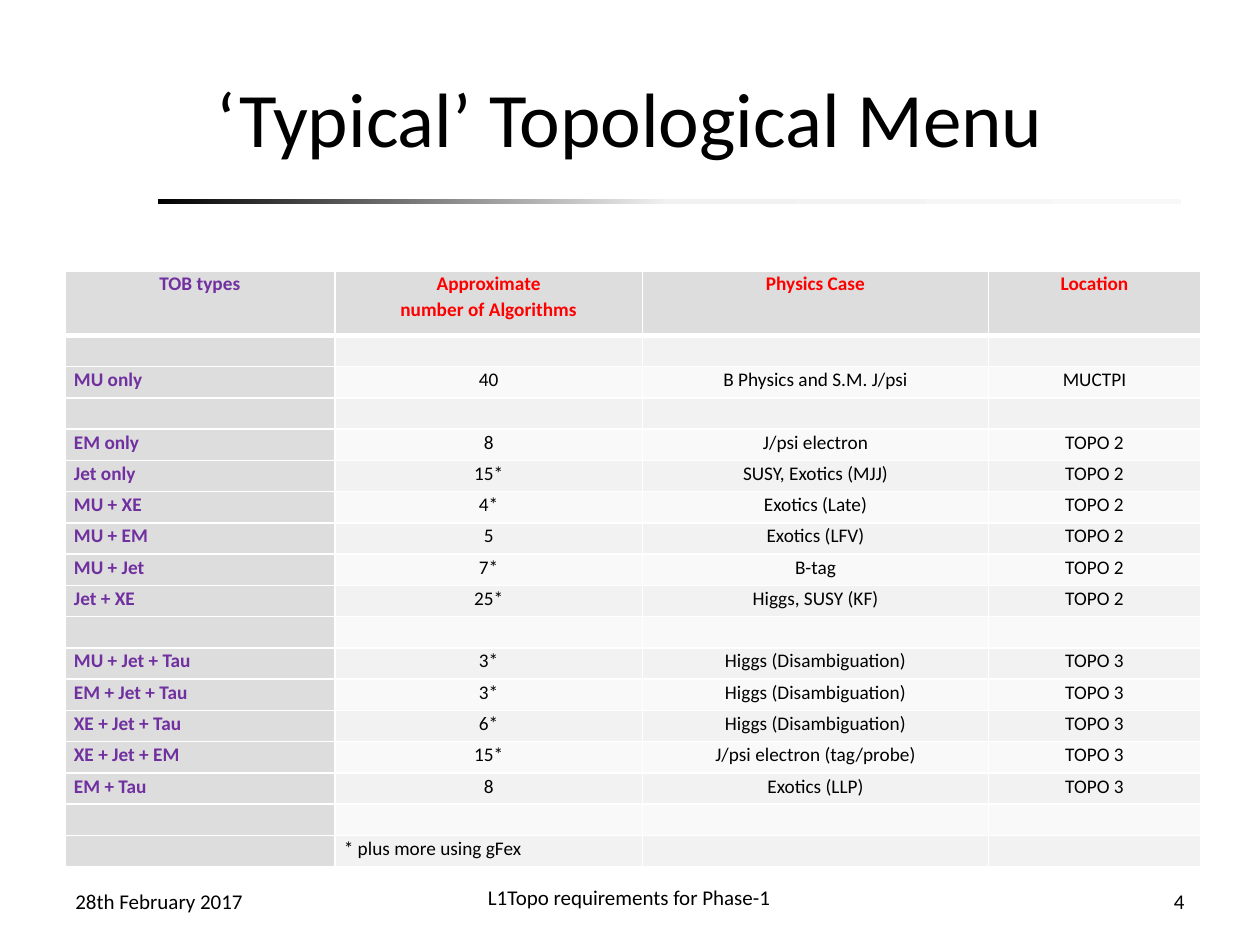
import lxml.etree
import pptx
import pptx.dml.color
import pptx.enum.shapes
import pptx.enum.text
import pptx.oxml
import pptx.oxml.ns
import pptx.util

Cm = pptx.util.Cm
Pt = pptx.util.Pt
RGBColor = pptx.dml.color.RGBColor
ALIGN = pptx.enum.text.PP_ALIGN
MIDDLE = pptx.enum.text.MSO_ANCHOR.MIDDLE
qn = pptx.oxml.ns.qn

BLACK = RGBColor(0x00, 0x00, 0x00)
WHITE = RGBColor(0xFF, 0xFF, 0xFF)
RED = RGBColor(0xFF, 0x00, 0x00)
PURPLE = RGBColor(0x70, 0x30, 0xA0)
HEADING_GREY = RGBColor(0xDD, 0xDD, 0xDD)
DARK_BAND = RGBColor(0xF2, 0xF2, 0xF2)
LIGHT_BAND = RGBColor(0xF9, 0xF9, 0xF9)
RULE_STOPS = [
    (0, BLACK),
    (50, RGBColor(0xF1, 0xF1, 0xF1)),
    (100, RGBColor(0xF8, 0xF8, 0xF8)),
]

FONT = "Calibri"
TABLE_SIZE = Pt(11)
COLUMN_WIDTHS = [5.44, 6.2, 6.98, 4.27]
HEADER_HEIGHT, ROW_HEIGHT = 1.3, 0.63
BLANK_ROW = ("", "", "", "")
MENU = [
    ("TOB types", "Approximate\nnumber of Algorithms", "Physics Case", "Location"),
    BLANK_ROW,
    ("MU only", "40", "B Physics and S.M. J/psi", "MUCTPI"),
    BLANK_ROW,
    ("EM only", "8", "J/psi electron", "TOPO 2"),
    ("Jet only", "15*", "SUSY, Exotics (MJJ)", "TOPO 2"),
    ("MU + XE", "4*", "Exotics (Late)", "TOPO 2"),
    ("MU + EM", "5", "Exotics (LFV)", "TOPO 2"),
    ("MU + Jet", "7*", "B-tag", "TOPO 2"),
    ("Jet + XE", "25*", "Higgs, SUSY (KF)", "TOPO 2"),
    BLANK_ROW,
    ("MU + Jet + Tau", "3*", "Higgs (Disambiguation)", "TOPO 3"),
    ("EM + Jet + Tau", "3*", "Higgs (Disambiguation)", "TOPO 3"),
    ("XE + Jet + Tau", "6*", "Higgs (Disambiguation)", "TOPO 3"),
    ("XE + Jet + EM", "15*", "J/psi electron (tag/probe)", "TOPO 3"),
    ("EM + Tau", "8", "Exotics (LLP)", "TOPO 3"),
    BLANK_ROW,
    ("", "* plus more using gFex", "", ""),
]


def format_paragraph(paragraph, size, color=BLACK, alignment=ALIGN.LEFT, bold=False):
    paragraph.alignment = alignment
    font = paragraph.font
    font.name, font.size, font.bold = FONT, size, bold
    font.color.rgb = color


def place(shape, left, top, width, height):
    shape.left, shape.top = Cm(left), Cm(top)
    shape.width, shape.height = Cm(width), Cm(height)


def add_title(slide, text):
    title = slide.shapes.title
    place(title, 1.27, 0.76, 22.86, 3.18)
    title.text_frame.text = text
    title.text_frame.vertical_anchor = MIDDLE
    format_paragraph(title.text_frame.paragraphs[0], Pt(44), alignment=ALIGN.CENTER)


def add_gradient_rule(slide):
    rule = slide.shapes.add_shape(
        pptx.enum.shapes.MSO_SHAPE.RECTANGLE, Cm(3.18), Cm(4.01), Cm(20.62), Cm(0.1))
    rule.shadow.inherit = False
    rule.line.fill.background()
    rule.fill.gradient()
    rule.fill.gradient_angle = 0
    stop_list = rule.element.spPr.find(".//" + qn("a:gsLst"))
    for stop in list(stop_list):
        stop_list.remove(stop)
    for percent, color in RULE_STOPS:
        stop = lxml.etree.SubElement(stop_list, qn("a:gs"), pos=str(percent * 1000))
        lxml.etree.SubElement(stop, qn("a:srgbClr"), val=str(color))


def add_footer(slide, text, left, top, width, alignment):
    box = slide.shapes.add_textbox(Cm(left), Cm(top), Cm(width), Cm(1.02))
    frame = box.text_frame
    frame.word_wrap = True
    frame.vertical_anchor = MIDDLE
    frame.text = text
    format_paragraph(frame.paragraphs[0], Pt(12), alignment=alignment)


def set_borders(cell, bottom_width):
    properties = cell._tc.get_or_add_tcPr()
    widths = [("a:lnL", 1), ("a:lnR", 1), ("a:lnT", 1), ("a:lnB", bottom_width)]
    for index, (tag, width) in enumerate(widths):
        line = properties.makeelement(qn(tag), {"w": str(Pt(width))})
        fill = lxml.etree.SubElement(line, qn("a:solidFill"))
        lxml.etree.SubElement(fill, qn("a:srgbClr"), val=str(WHITE))
        properties.insert(index, line)


def cell_style(row, column, text):
    """Return fill, text colour, alignment and weight for a table position."""
    if row == 0:
        return HEADING_GREY, PURPLE if column == 0 else RED, ALIGN.CENTER, True
    if column == 0:
        return HEADING_GREY, PURPLE, ALIGN.LEFT, True
    band = DARK_BAND if row % 2 else LIGHT_BAND
    is_footnote = text.startswith("*")
    return band, BLACK, ALIGN.LEFT if is_footnote else ALIGN.CENTER, False


def fill_cell(cell, row, column, text):
    fill, color, alignment, bold = cell_style(row, column, text)
    cell.margin_left = cell.margin_right = Cm(0.18)
    cell.margin_top = cell.margin_bottom = 0
    cell.fill.solid()
    cell.fill.fore_color.rgb = fill
    set_borders(cell, 3 if row <= 0 else 1)
    cell.text_frame.text = text
    for paragraph in cell.text_frame.paragraphs:
        paragraph.line_spacing = 1.07
        format_paragraph(paragraph, TABLE_SIZE, color, alignment, bold)
        if not text:
            # Keep blank rows as low as the rows with text
            lxml.etree.SubElement(
                paragraph._p, qn("a:endParaRPr"), sz=str(int(TABLE_SIZE.pt * 100)))


def add_menu_table(slide):
    height = HEADER_HEIGHT + ROW_HEIGHT * (len(MENU) - 1)
    table = slide.shapes.add_table(
        len(MENU), len(COLUMN_WIDTHS), Cm(1.31), Cm(5.46),
        Cm(sum(COLUMN_WIDTHS)), Cm(height)).table
    for column, width in zip(table.columns, COLUMN_WIDTHS):
        column.width = Cm(width)
    for row, texts in enumerate(MENU):
        table.rows[row].height = Cm(ROW_HEIGHT if row else HEADER_HEIGHT)
        for column, text in enumerate(texts):
            fill_cell(table.cell(row, column), row, column, text)


def main():
    presentation = pptx.Presentation()
    presentation.slide_width, presentation.slide_height = Cm(25.4), Cm(19.05)
    slide = presentation.slides.add_slide(presentation.slide_layouts[5])

    # Heading
    add_gradient_rule(slide)
    add_title(slide, "‘Typical’ Topological Menu")

    # Footer line
    add_footer(slide, "28th February 2017", 1.27, 17.65, 5.92, ALIGN.LEFT)
    add_footer(slide, "L1Topo requirements for Phase-1", 6.55, 17.58, 12.27, ALIGN.CENTER)
    add_footer(slide, "4", 18.21, 17.65, 5.92, ALIGN.RIGHT)

    # Trigger menu
    add_menu_table(slide)
    presentation.save("out.pptx")


if __name__ == "__main__":
    main()
